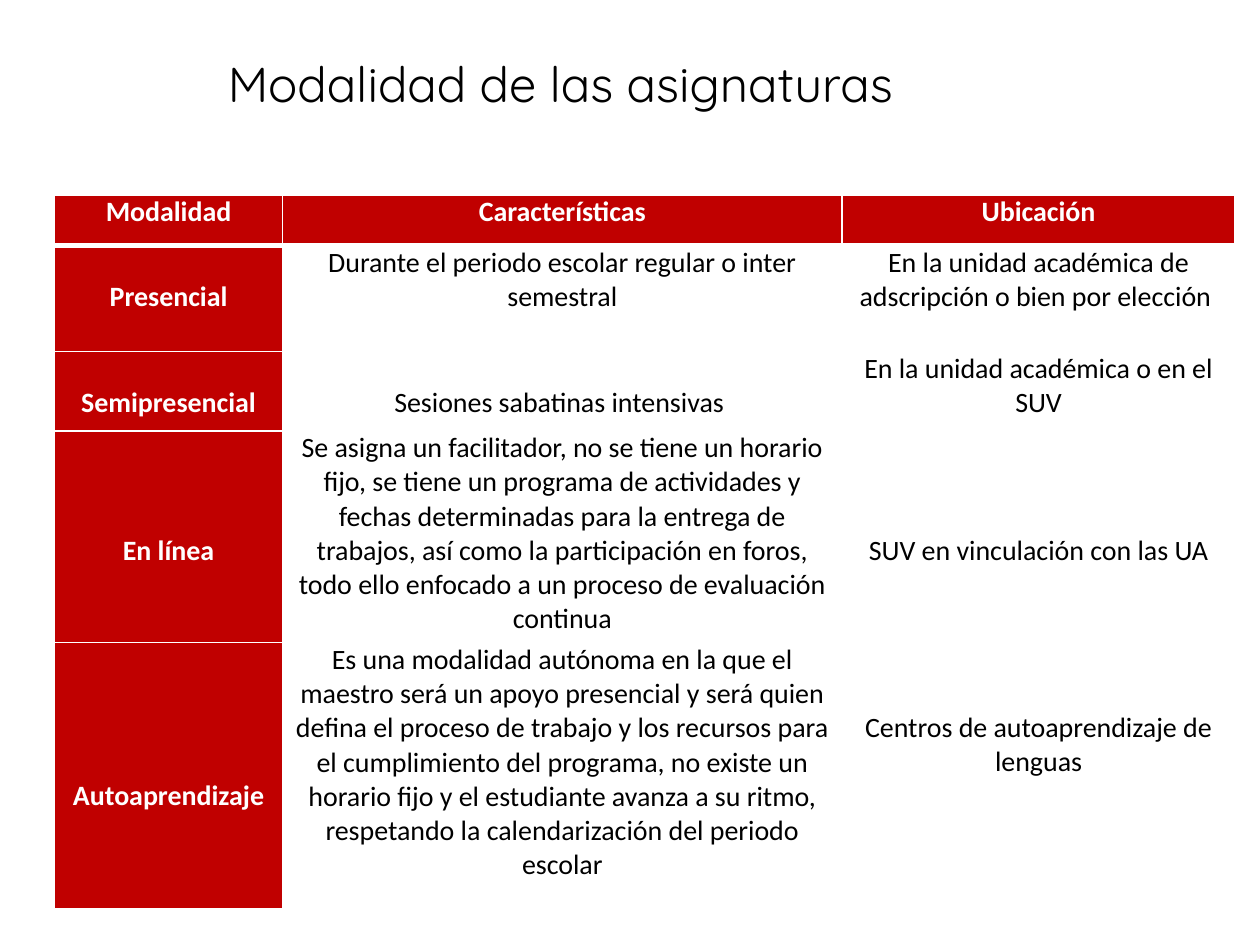
from lxml.etree import SubElement
from pptx import Presentation
from pptx.dml.color import RGBColor
from pptx.enum.text import MSO_ANCHOR as Anchor, PP_ALIGN as Align
from pptx.oxml.ns import qn
from pptx.util import Pt

COLORS = {"red": "C00000", "white": "FFFFFF", "black": "000000"}
LINE_HEIGHT = 19.5
COLUMN_WIDTHS = [130.3, 319.7, 224.6]
ROW_HEIGHTS = [28.8, 60.5, 45.4, 121, 151.9]

# Each cell holds its text and the number of lines it sits below the cell top
ROWS = [
    [("Modalidad", 0), ("Características", 0), ("Ubicación", 0)],
    [("Presencial", 1),
     ("Durante el periodo escolar regular o inter semestral", 0),
     ("En la unidad académica de adscripción o bien por elección ", 0)],
    [("Semipresencial", 1),
     ("Sesiones sabatinas intensivas ", 1),
     ("En la unidad académica o en el SUV", 0)],
    [("En línea", 3),
     ("Se asigna un facilitador, no se tiene un horario fijo, se tiene un programa "
      "de actividades y fechas determinadas para la entrega de trabajos, así como "
      "la participación en foros, todo ello enfocado a un proceso de evaluación "
      "continua", 0),
     ("SUV en vinculación con las UA", 3)],
    [("Autoaprendizaje", 4),
     ("Es una modalidad autónoma en la que el maestro será un apoyo presencial y "
      "será quien defina el proceso de trabajo y los recursos para el cumplimiento "
      "del programa, no existe un horario fijo y el estudiante avanza a su ritmo, "
      "respetando la calendarización del periodo escolar", 0),
     ("Centros de autoaprendizaje de lenguas", 2)],
]


def add_run(paragraph, text, font_name, size, color, bold=False):
    run = paragraph.add_run()
    run.text = text
    run.font.name = font_name
    run.font.size = Pt(size)
    run.font.bold = bold
    run.font.color.rgb = RGBColor.from_string(COLORS[color])


def add_border(cell, side, width):
    properties = cell._tc.get_or_add_tcPr()
    line = SubElement(properties, qn(f"a:ln{side}"), w=str(Pt(width)))
    fill = SubElement(line, qn("a:solidFill"))
    SubElement(fill, qn("a:srgbClr"), val=COLORS["white"])


presentation = Presentation()
presentation.slide_width = Pt(720)
presentation.slide_height = Pt(540)
slide = presentation.slides.add_slide(presentation.slide_layouts[5])

title = slide.shapes.title
title.left, title.top, title.width, title.height = Pt(0), Pt(44), Pt(648), Pt(44.6)
title.text_frame.vertical_anchor = Anchor.MIDDLE
title_paragraph = title.text_frame.paragraphs[0]
title_paragraph.alignment = Align.CENTER
title_paragraph.line_spacing = 0.9
title_paragraph.font.size = Pt(28)
title_paragraph.font.name = "Quicksand"
add_run(title_paragraph, "Modalidad de las asignaturas ", "Quicksand", 28, "black")
title_paragraph.add_line_break()
add_run(title_paragraph, "", "Quicksand", 28, "black")

table = slide.shapes.add_table(
    len(ROWS), len(COLUMN_WIDTHS), Pt(31.2), Pt(111.6),
    Pt(sum(COLUMN_WIDTHS)), Pt(sum(ROW_HEIGHTS))).table
table.horz_banding = False
for column, width in zip(table.columns, COLUMN_WIDTHS):
    column.width = Pt(width)
for row, height in zip(table.rows, ROW_HEIGHTS):
    row.height = Pt(height)

for row_index, row_cells in enumerate(ROWS):
    for column_index, (text, lines_above) in enumerate(row_cells):
        cell = table.cell(row_index, column_index)
        is_heading = row_index == 0 or column_index == 0
        add_border(cell, "L", 1)
        add_border(cell, "R", 1)
        add_border(cell, "T", 3 if row_index == 1 else 1)
        add_border(cell, "B", 3 if row_index == 0 else 1)
        cell.fill.solid()
        cell.fill.fore_color.rgb = RGBColor.from_string(
            COLORS["red" if is_heading else "white"])
        cell.margin_left = cell.margin_right = Pt(5)
        cell.margin_top = Pt(lines_above * LINE_HEIGHT)
        cell.margin_bottom = Pt(0)
        cell.vertical_anchor = Anchor.TOP
        paragraph = cell.text_frame.paragraphs[0]
        paragraph.alignment = Align.CENTER
        add_run(paragraph, text, "Calibri", 16,
                "white" if is_heading else "black", is_heading)

presentation.save("out.pptx")
